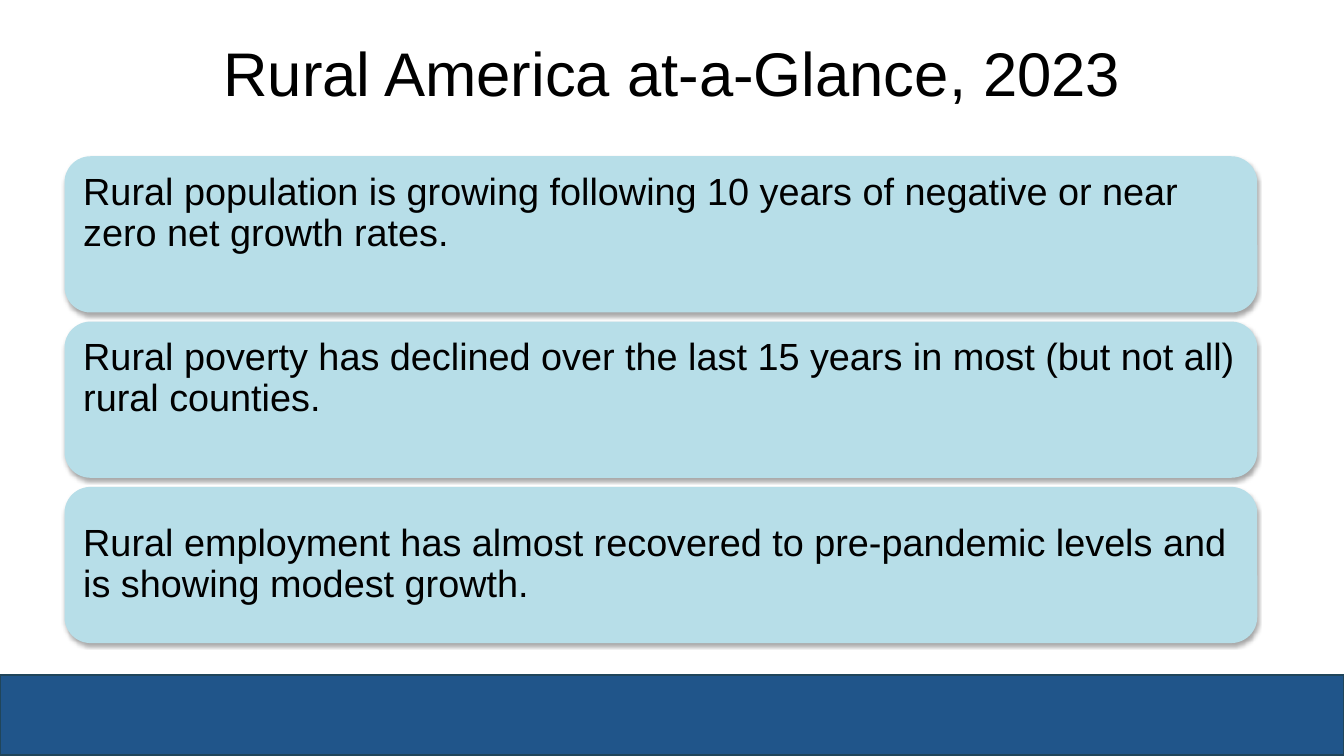
from lxml import etree
from pptx import Presentation
from pptx.dml.color import RGBColor
from pptx.enum.shapes import MSO_SHAPE
from pptx.enum.text import MSO_ANCHOR, PP_ALIGN
from pptx.oxml.ns import qn
from pptx.util import Inches, Pt

RECTANGLE, ROUNDED = MSO_SHAPE.RECTANGLE, MSO_SHAPE.ROUNDED_RECTANGLE
TOP, MIDDLE = MSO_ANCHOR.TOP, MSO_ANCHOR.MIDDLE
LEFT, CENTER = PP_ALIGN.LEFT, PP_ALIGN.CENTER

TITLE = "Rural America at-a-Glance, 2023"
FINDINGS = [
    ("Rural population is growing following 10 years of negative or near zero net growth rates.", TOP),
    ("Rural poverty has declined over the last 15 years in most (but not all) rural counties.", TOP),
    ("Rural employment has almost recovered to pre-pandemic levels and is showing modest growth.", MIDDLE),
]

THEME = {
    "font": "Arial",
    "text": "000000",
    "card": "B7DEE8",
    "band": "20558A",
    "band_line": "20455A",
    "shadow": "000000",
    "title_size": 44,
    "card_size": 27,
}

CARD_LEFT, CARD_TOP, CARD_WIDTH, CARD_HEIGHT = 0.64, 1.55, 11.83, 1.55
CARD_STEP = 1.64


def color(name):
    return RGBColor.from_string(THEME[name])


def write(shape, text, size, align, anchor, inset_x, inset_y):
    frame = shape.text_frame
    frame.word_wrap = True
    frame.vertical_anchor = anchor
    frame.margin_left = frame.margin_right = Inches(inset_x)
    frame.margin_top = frame.margin_bottom = Inches(inset_y)
    paragraph = frame.paragraphs[0]
    paragraph.alignment = align
    paragraph.line_spacing = 0.9
    run = paragraph.add_run()
    run.text = text
    run.font.name = THEME["font"]
    run.font.size = Pt(THEME[size])
    run.font.color.rgb = color("text")


def add_box(slide, kind, left, top, width, height, fill):
    shape = slide.shapes.add_shape(kind, Inches(left), Inches(top), Inches(width), Inches(height))
    shape.shadow.inherit = False
    shape.fill.solid()
    shape.fill.fore_color.rgb = color(fill)
    shape.line.fill.background()
    return shape


def add_shadow(shape):
    effects = shape._element.spPr.find(qn("a:effectLst"))
    shadow = etree.SubElement(
        effects, qn("a:outerShdw"), blurRad=str(Pt(3.1)), dist=str(Pt(1.8)),
        dir="5400000", rotWithShape="0")
    shade = etree.SubElement(shadow, qn("a:srgbClr"), val=THEME["shadow"])
    etree.SubElement(shade, qn("a:alpha"), val="35000")


def main():
    presentation = Presentation()
    presentation.slide_width, presentation.slide_height = Inches(13.33), Inches(7.5)
    slide = presentation.slides.add_slide(presentation.slide_layouts[6])

    band = add_box(slide, RECTANGLE, 0, 6.7, 13.33, 0.79, "band")
    band.line.color.rgb = color("band_line")
    band.line.width = Pt(1.5)

    title = slide.shapes.add_textbox(Inches(1.27), Inches(0.22), Inches(10.8), Inches(1.07))
    write(title, TITLE, "title_size", CENTER, MIDDLE, 0.1, 0.05)

    for index, (finding, anchor) in enumerate(FINDINGS):
        card = add_box(slide, ROUNDED, CARD_LEFT, CARD_TOP + index * CARD_STEP,
                       CARD_WIDTH, CARD_HEIGHT, "card")
        add_shadow(card)
        write(card, finding, "card_size", LEFT, anchor, 0.11, 0.09)

    presentation.save("out.pptx")


if __name__ == "__main__":
    main()
